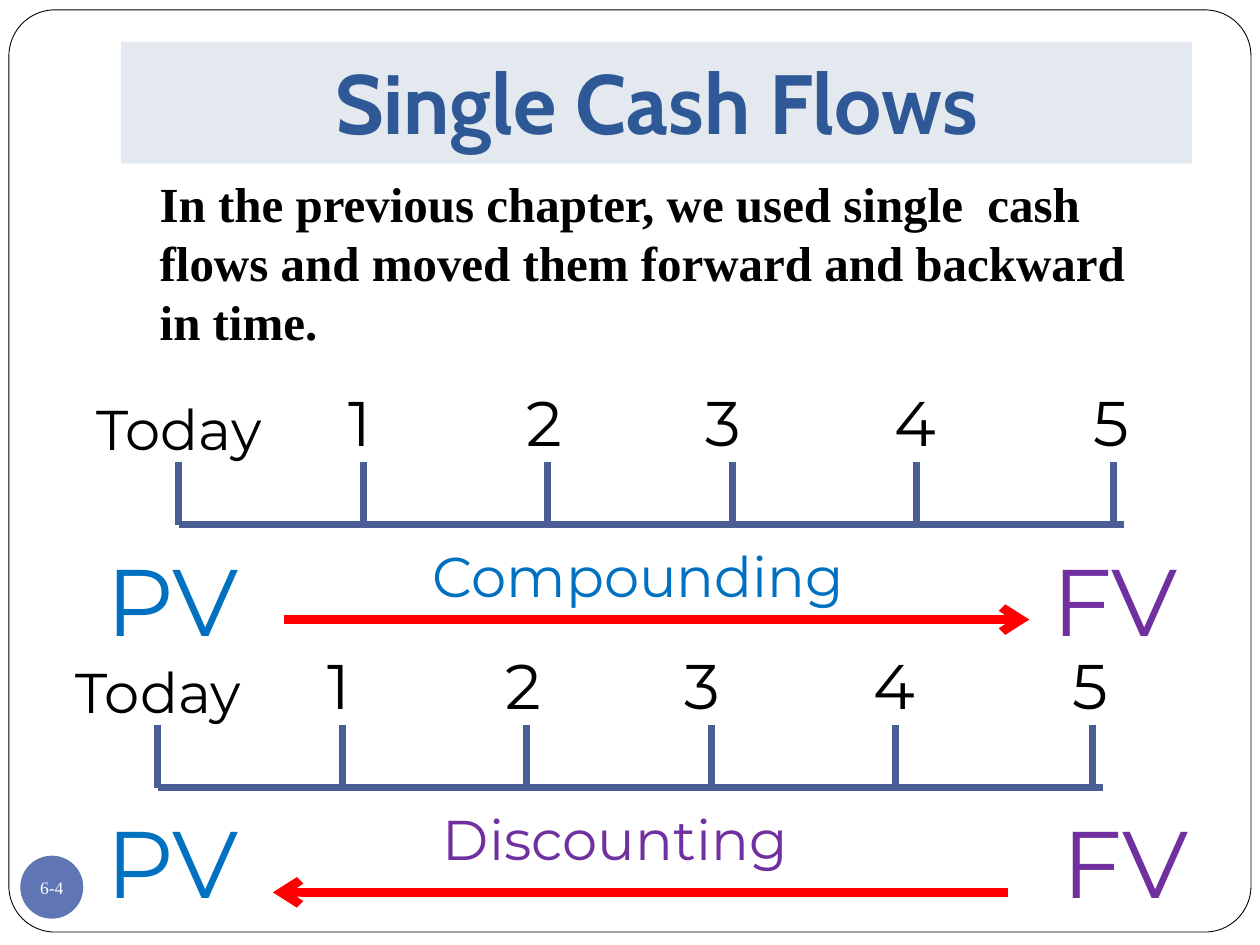
from lxml import etree
from pptx import Presentation
from pptx import util as u
from pptx.dml.color import RGBColor
from pptx.enum import shapes, text
from pptx.oxml import ns

BLACK = RGBColor(0x00, 0x00, 0x00)
WHITE = RGBColor(0xFF, 0xFF, 0xFF)
NAVY = RGBColor(0x2F, 0x58, 0x97)
PALE = RGBColor(0xE4, 0xE9, 0xEF)
DISC = RGBColor(0x60, 0x76, 0xB4)
SLATE = RGBColor(0x4A, 0x5D, 0x94)
RED = RGBColor(0xFF, 0x00, 0x00)
BLUE = RGBColor(0x00, 0x70, 0xC0)
PLUM = RGBColor(0x70, 0x30, 0xA0)

SANS, SERIF, HEAD = "Montserrat", "Times New Roman", "Cabin"
KIND = shapes.MSO_SHAPE
MID = text.MSO_ANCHOR.MIDDLE
LOW = text.MSO_ANCHOR.BOTTOM
CENTER = text.PP_ALIGN.CENTER

STEP, TICK, SPAN = 3.72, 1.27, 19.05
TICKS = [STEP * n for n in range(5)] + [18.84]
# left offset and width of each year's label
YEARS = [(3.18, 1.37), (6.77, 1.47), (10.37, 1.7), (14.18, 1.47), (18.2, 1.37)]


class Deck:
    def __init__(self):
        self.prs = Presentation()
        self.prs.slide_width = u.Cm(25.4)
        self.prs.slide_height = u.Cm(19.05)
        self.slide = self.prs.slides.add_slide(self.prs.slide_layouts[6])
        self.home = self.slide.shapes

    def letter(self, shape, words, size, color, font=SANS, bold=False,
               align=None, **frame):
        """Fill a shape with one run; frame holds text frame settings."""
        tf = shape.text_frame
        for key, val in {"word_wrap": True, **frame}.items():
            setattr(tf, key, val)
        par = tf.paragraphs[0]
        par.alignment = align
        run = par.add_run()
        run.text = words
        look = {"name": font, "size": u.Pt(size), "bold": bold}
        for key, val in look.items():
            setattr(run.font, key, val)
        run.font.color.rgb = color

    def label(self, at, words, size, color=BLACK, **style):
        box = self.home.add_textbox(*map(u.Cm, at))
        self.letter(box, words, size, color, **style)

    def shape(self, kind, at, fill, edge=None):
        shp = self.home.add_shape(kind, *map(u.Cm, at))
        shp.shadow.inherit = False
        shp.fill.solid()
        shp.fill.fore_color.rgb = fill
        if edge is None:
            shp.line.fill.background()
        else:
            shp.line.color.rgb = edge
            shp.line.width = u.Pt(0.5)
        return shp

    def line(self, x1, y1, x2, y2, color=SLATE, width=4, arrow=False):
        ends = map(u.Cm, (x1, y1, x2, y2))
        con = self.home.add_connector(shapes.MSO_CONNECTOR.STRAIGHT, *ends)
        con.line.color.rgb = color
        con.line.width = u.Pt(width)
        props = con._element.spPr
        if arrow:
            etree.SubElement(props.find(ns.qn("a:ln")), ns.qn("a:tailEnd"),
                             type="arrow")
        etree.SubElement(props, ns.qn("a:effectLst"))

    def scale(self, x, y):
        """Draw a grouped time line whose bar starts at x, y."""
        self.home = self.slide.shapes.add_group_shape().shapes
        self.line(x, y, x + SPAN, y)
        for dx in TICKS:
            self.line(x + dx, y - TICK, x + dx, y)
        self.label((x - 1.9, y - 2.75, 4.45, 1.63), "Today", 32)
        for year, (dx, wide) in enumerate(YEARS, 1):
            self.label((x + dx, y - 2.97, wide, 1.8), str(year), 36)
        self.home = self.slide.shapes

    def flow(self, y, words, left, color, future, start, end, shaft):
        """Draw PV, the named arrow and FV in one row."""
        self.label((1.9, y, 4.88, 2.57), "PV", 54, BLUE)
        self.label((future, y, 3.38, 2.57), "FV", 54, PLUM)
        self.label((left, y, 11, 1.63), words, 32, color)
        self.line(start, shaft, end, shaft, RED, 5, arrow=True)


def main():
    deck = Deck()
    frame = deck.shape(KIND.ROUNDED_RECTANGLE, (0.18, 0.2, 25.04, 18.59),
                       WHITE, BLACK)
    frame.adjustments[0] = 0.05

    page = deck.shape(KIND.OVAL, (0.41, 17.25, 1.27, 1.27), DISC)
    sides = ("margin_left", "margin_top", "margin_right", "margin_bottom")
    deck.letter(page, "6-4", 10, WHITE, SERIF, align=CENTER, word_wrap=False,
                vertical_anchor=MID, **dict.fromkeys(sides, 0))

    title = deck.shape(KIND.RECTANGLE, (2.44, 0.84, 21.59, 2.46), PALE)
    deck.letter(title, "Single Cash Flows", 48, NAVY, HEAD, True, CENTER,
                vertical_anchor=LOW, margin_bottom=u.Cm(0.25))

    deck.label((2.97, 3.38, 20.52, 3.84),
               "In the previous chapter, we used single  cash flows and "
               "moved them forward and backward in time.",
               28, font=SERIF, bold=True)

    deck.scale(3.6, 10.58)
    deck.flow(10.8, "Compounding", 8.47, BLUE, 20.96, 5.72, 20.75, 12.49)
    deck.scale(3.18, 15.88)
    deck.flow(16.09, "Discounting", 8.68, PLUM, 21.17, 20.32, 5.5, 17.99)

    deck.prs.save("out.pptx")


if __name__ == "__main__":
    main()
